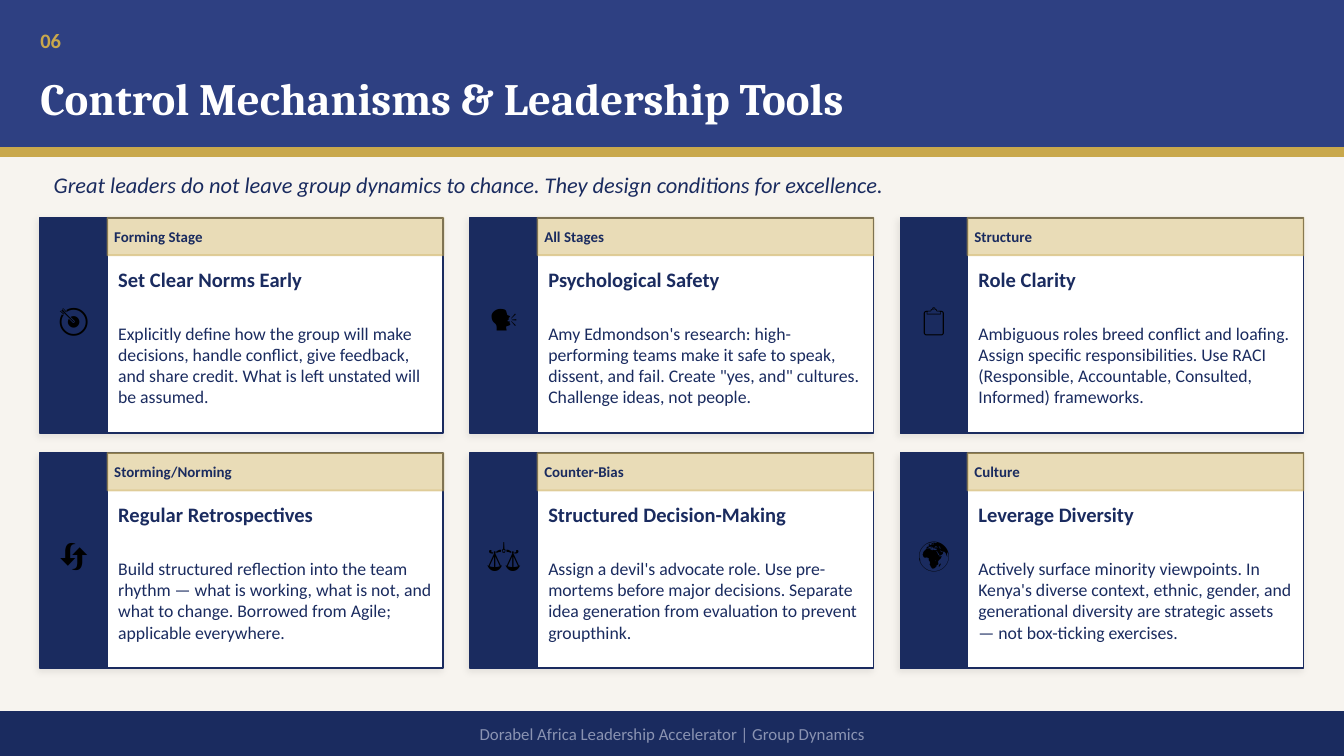
from lxml.etree import SubElement
from pptx import Presentation
from pptx.dml.color import RGBColor
from pptx.enum.shapes import MSO_SHAPE
from pptx.enum.text import MSO_ANCHOR, MSO_AUTO_SIZE, PP_ALIGN
from pptx.oxml.ns import qn
from pptx.util import Emu, Pt

NUMBER = "06"
TITLE = "Control Mechanisms & Leadership Tools"
LEAD = "Great leaders do not leave group dynamics to chance. They design conditions for excellence."
FOOTER = "Dorabel Africa Leadership Accelerator | Group Dynamics"
TOOLS = [
    ("🎯", "Forming Stage", "Set Clear Norms Early",
     "Explicitly define how the group will make decisions, handle conflict, give feedback, "
     "and share credit. What is left unstated will be assumed."),
    ("🗣️", "All Stages", "Psychological Safety",
     "Amy Edmondson's research: high-performing teams make it safe to speak, dissent, and fail. "
     "Create \"yes, and\" cultures. Challenge ideas, not people."),
    ("📋", "Structure", "Role Clarity",
     "Ambiguous roles breed conflict and loafing. Assign specific responsibilities. "
     "Use RACI (Responsible, Accountable, Consulted, Informed) frameworks."),
    ("🔄", "Storming/Norming", "Regular Retrospectives",
     "Build structured reflection into the team rhythm — what is working, what is not, "
     "and what to change. Borrowed from Agile; applicable everywhere."),
    ("⚖️", "Counter-Bias", "Structured Decision-Making",
     "Assign a devil's advocate role. Use pre-mortems before major decisions. "
     "Separate idea generation from evaluation to prevent groupthink."),
    ("🌍", "Culture", "Leverage Diversity",
     "Actively surface minority viewpoints. In Kenya's diverse context, ethnic, gender, and "
     "generational diversity are strategic assets — not box-ticking exercises."),
]

THEME = {
    "colors": {"paper": "F7F4EF", "navy": "1A2B5F", "blue": "2E4082", "gold": "C9A84C",
               "white": "FFFFFF", "black": "000000", "muted": "8A93B2"},
    "text": {
        "number": {"size": 11, "color": "gold", "bold": True},
        "title": {"size": 24, "color": "white", "bold": True, "name": "Cambria"},
        "lead": {"size": 12, "color": "navy", "italic": True},
        "icon": {"size": 16, "color": "black"},
        "tag": {"size": 8, "color": "navy", "bold": True},
        "heading": {"size": 11, "color": "navy", "bold": True},
        "body": {"size": 9.5, "color": "navy"},
        "footer": {"size": 9, "color": "muted"},
    },
}

PX = 4572  # EMU in one px, 200 px to the inch
WIDTH, HEIGHT = 2000, 1125
COLUMNS = 3
LEFT, TOP = 60, 324
CARD_W, CARD_H = 600, 320
STEP_X, STEP_Y = CARD_W + 40, CARD_H + 30
ICON_W, ICON_H, TAG_H = 100, 100, 56
FOOTER_BOX = (0, 1060, WIDTH, 64)


def px(*lengths):
    return [Emu(n * PX) for n in lengths]


def color(name):
    return RGBColor.from_string(THEME["colors"][name])


def set_alpha(color_format_parent, percent):
    rgb = color_format_parent.find(".//" + qn("a:srgbClr"))
    SubElement(rgb, qn("a:alpha"), val=str(percent * 1000))


def add_rect(s, box, fill, line):
    sp = s.shapes.add_shape(MSO_SHAPE.RECTANGLE, *px(*box))
    sp.shadow.inherit = False
    sp.fill.solid()
    sp.fill.fore_color.rgb = color(fill)
    sp.line.color.rgb = color(line)
    sp.line.width = Pt(1)
    return sp


def add_soft_shadow(sp):
    effects = sp.element.spPr.find(qn("a:effectLst"))
    shadow = SubElement(effects, qn("a:outerShdw"), blurRad=str(Pt(4)), dist=str(Pt(2)),
                        dir=str(135 * 60000), algn="bl", rotWithShape="0")
    SubElement(shadow, qn("a:srgbClr"), val=THEME["colors"]["black"])
    set_alpha(effects, 7)


def write(sp, text, style, align=PP_ALIGN.LEFT):
    tf = sp.text_frame
    frame = {"word_wrap": True, "auto_size": MSO_AUTO_SIZE.NONE,
             "vertical_anchor": MSO_ANCHOR.MIDDLE, "margin_left": 0, "margin_top": 0,
             "margin_right": 0, "margin_bottom": 0}
    for key, value in frame.items():
        setattr(tf, key, value)
    p = tf.paragraphs[0]
    p.alignment = align
    r = p.add_run()
    r.text = text
    font = {"name": "Calibri", **THEME["text"][style]}
    r.font.color.rgb = color(font.pop("color"))
    font["size"] = Pt(font["size"])
    for key, value in font.items():
        setattr(r.font, key, value)


def add_text(s, box, *content):
    write(s.shapes.add_textbox(*px(*box)), *content)


def add_card(s, x, y, tool):
    icon, tag, heading, body = tool
    add_soft_shadow(add_rect(s, (x, y, CARD_W, CARD_H), "white", "navy"))
    add_rect(s, (x, y, ICON_W, CARD_H), "navy", "navy")
    add_text(s, (x, y + 100, ICON_W, ICON_H), icon, "icon", PP_ALIGN.CENTER)

    tag_x, tag_w = x + ICON_W, CARD_W - ICON_W
    strip = add_rect(s, (tag_x, y, tag_w, TAG_H), "gold", "gold")
    set_alpha(strip.element.spPr.find(qn("a:solidFill")), 40)
    set_alpha(strip.element.spPr.find(qn("a:ln")), 50)
    add_text(s, (tag_x + 10, y, tag_w - 20, TAG_H), tag, "tag")

    text_x, text_w = tag_x + 16, tag_w - 32
    add_text(s, (text_x, y + 60, text_w, 64), heading, "heading")
    add_text(s, (text_x, y + 124, text_w, 190), body, "body")


def main():
    prs = Presentation()
    prs.slide_width, prs.slide_height = px(WIDTH, HEIGHT)
    s = prs.slides.add_slide(prs.slide_layouts[5])
    s.background.fill.solid()
    s.background.fill.fore_color.rgb = color("paper")

    add_rect(s, (0, 0, WIDTH, 220), "blue", "blue")
    add_rect(s, (0, 220, WIDTH, 12), "gold", "gold")
    add_text(s, (LEFT, 20, 120, 80), NUMBER, "number")

    title = s.shapes.title
    title.left, title.top, title.width, title.height = px(LEFT, 90, 1800, 110)
    write(title, TITLE, "title")
    title.element.getparent().append(title.element)  # in front of the header band

    add_text(s, (80, 244, 1840, 60), LEAD, "lead")
    for i, tool in enumerate(TOOLS):
        row, column = divmod(i, COLUMNS)
        add_card(s, LEFT + column * STEP_X, TOP + row * STEP_Y, tool)

    add_rect(s, FOOTER_BOX, "navy", "navy")
    add_text(s, FOOTER_BOX, FOOTER, "footer", PP_ALIGN.CENTER)
    prs.save("out.pptx")


if __name__ == "__main__":
    main()
